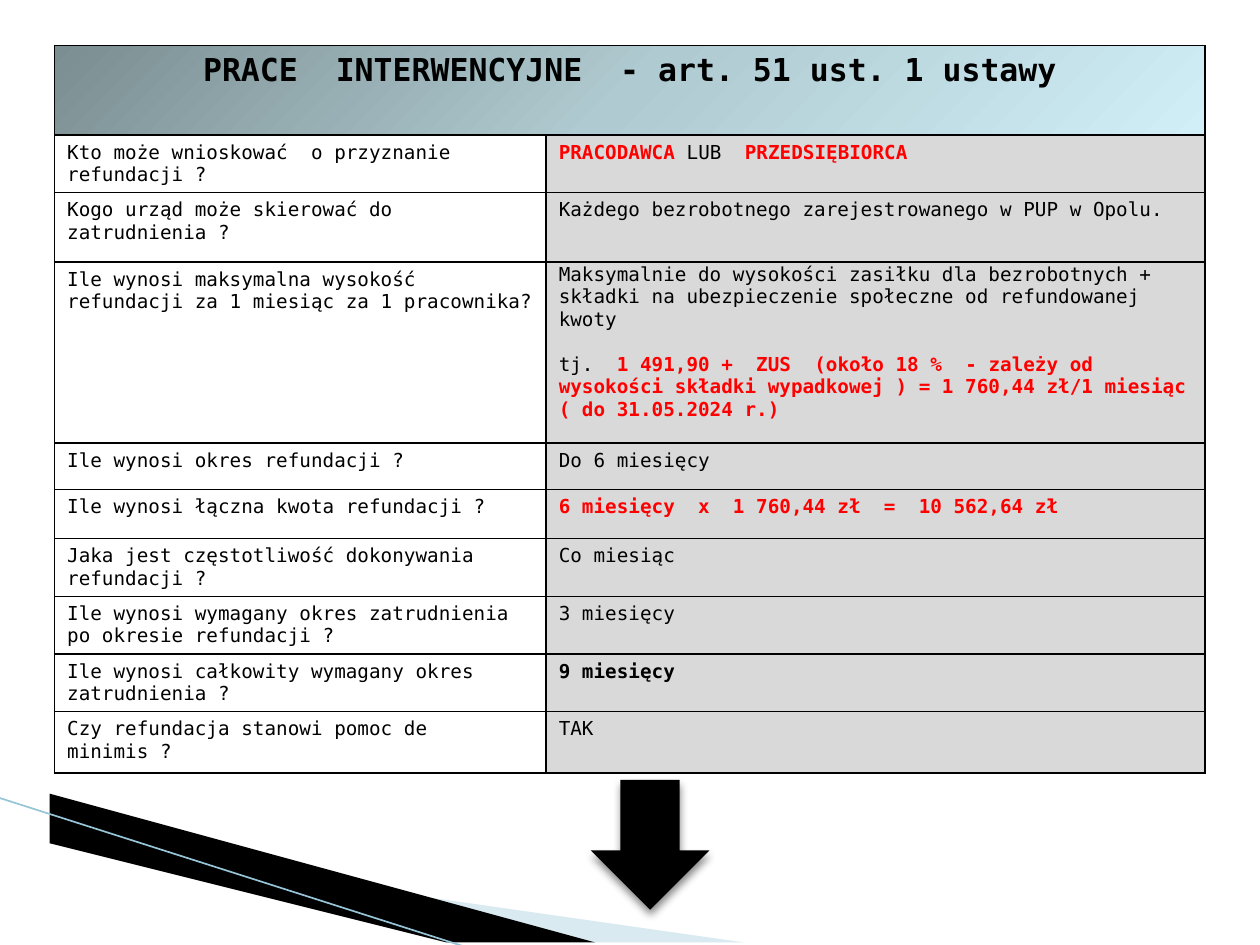
from lxml.etree import SubElement
from pptx import Presentation
from pptx.dml.color import RGBColor
from pptx.enum.shapes import MSO_CONNECTOR, MSO_SHAPE
from pptx.enum.text import PP_ALIGN
from pptx.oxml.ns import qn
from pptx.util import Cm, Pt

BLACK = RGBColor(0, 0, 0)
WHITE = RGBColor(255, 255, 255)
RED = RGBColor(255, 0, 0)
GREY = RGBColor(0xD9, 0xD9, 0xD9)
PALE = RGBColor(0xA0, 0xCB, 0xDC)
BLUE = RGBColor(0x97, 0xC5, 0xD8)
FADE = [(0, RGBColor(0x7B, 0x8E, 0x92)), (50, RGBColor(0xAF, 0xCA, 0xD0)),
        (100, RGBColor(0xD0, 0xEF, 0xF7))]

BODY = {"name": "DejaVu Sans Mono", "size": Pt(11), "bold": False}
BOLD = BODY | {"bold": True}
HEAD = BOLD | {"size": Pt(18)}


def plain(text):
    return (text, BODY, BLACK)


def red(text):
    return (text, BOLD, RED)


TITLE = "PRACE  INTERWENCYJNE  - art. 51 ust. 1 ustawy"
# Height in cm, question, paragraphs of the answer as lists of runs
ROWS = [
    (1.16, "Kto może wnioskować  o przyznanie  refundacji ?",
     [[red("PRACODAWCA"), plain(" LUB  "), red("PRZEDSIĘBIORCA")]]),
    (1.4, "Kogo urząd może skierować do zatrudnienia ?",
     [[plain("Każdego bezrobotnego zarejestrowanego w PUP w Opolu.")]]),
    (3.65, "Ile wynosi maksymalna wysokość refundacji za 1 miesiąc za 1 pracownika?",
     [[plain("Maksymalnie do wysokości zasiłku dla bezrobotnych + składki na "
             "ubezpieczenie społeczne od refundowanej kwoty")],
      [plain("tj.  "),
       red("1 491,90 +  ZUS  (około 18 %  - zależy od wysokości składki "
           "wypadkowej ) = 1 760,44 zł/1 miesiąc ( do 31.05.2024 r.)")]]),
    (0.94, "Ile wynosi okres refundacji ?", [[plain("Do 6 miesięcy")]]),
    (0.99, "Ile wynosi łączna kwota refundacji ?",
     [[red("6 miesięcy  x  1 760,44 zł  =  10 562,64 zł")]]),
    (1.16, "Jaka jest częstotliwość dokonywania refundacji ?", [[plain("Co miesiąc")]]),
    (1.16, "Ile wynosi wymagany okres zatrudnienia po okresie refundacji ?",
     [[plain("3 miesięcy")]]),
    (1.16, "Ile wynosi całkowity wymagany okres zatrudnienia ?",
     [[("9 miesięcy", BOLD, BLACK)]]),
    (1.24, "Czy refundacja stanowi pomoc de minimis ?", [[plain("TAK")]]),
]


def node(parent, tag, **attrs):
    return SubElement(parent, qn(tag), {key: str(val) for key, val in attrs.items()})


class Deck:
    def __init__(self):
        self.show = Presentation()
        self.show.slide_width, self.show.slide_height = Cm(25.4), Cm(19.05)
        self.slide = self.show.slides.add_slide(self.show.slide_layouts[6])

    def wedge(self, points, color, alpha=100):
        """Draw a filled outline through points given in cm."""
        pen = self.slide.shapes.build_freeform(*points[0], scale=Cm(1))
        pen.add_line_segments(points[1:])
        shape = pen.convert_to_shape()
        shape.shadow.inherit = False
        shape.fill.solid()
        shape.fill.fore_color.rgb = color
        shape.line.fill.background()
        if alpha < 100:
            tint = shape.fill._xPr.find(".//" + qn("a:srgbClr"))
            node(tint, "a:alpha", val=alpha * 1000)

    def line(self, start, end, color, width):
        ends = [Cm(n) for n in (*start, *end)]
        line = self.slide.shapes.add_connector(MSO_CONNECTOR.STRAIGHT, *ends)
        line.line.color.rgb = color
        line.line.width = Pt(width)
        node(line._element.spPr, "a:effectLst")

    def arrow(self, *box):
        shape = self.slide.shapes.add_shape(MSO_SHAPE.DOWN_ARROW, *map(Cm, box))
        shape.fill.solid()
        shape.fill.fore_color.rgb = BLACK
        shape.line.fill.background()
        shape.shadow.inherit = False
        glow = node(shape._element.spPr.find(qn("a:effectLst")), "a:outerShdw",
                    blurRad=Pt(5), dist=Pt(3), dir=90 * 60000, rotWithShape=0)
        node(node(glow, "a:srgbClr", val=BLACK), "a:alpha", val=45000)

    def table(self, left, top, widths, heights):
        size = Cm(left), Cm(top), Cm(sum(widths)), Cm(sum(heights))
        grid = self.slide.shapes.add_table(len(heights), len(widths), *size).table
        grid.first_row = grid.horz_banding = False
        for col, width in zip(grid.columns, widths):
            col.width = Cm(width)
        for row, height in zip(grid.rows, heights):
            row.height = Cm(height)
        return grid

    def cell(self, cell, paras, fill, align=PP_ALIGN.LEFT):
        """Write paragraphs of runs; fill is a colour or a list of stops."""
        frame = cell.text_frame
        for i, runs in enumerate(paras):
            para = frame.add_paragraph() if i else frame.paragraphs[0]
            para.alignment = align
            if i:
                para.space_before = Pt(13)
            for text, style, color in runs:
                run = para.add_run()
                run.text = text
                for key, val in style.items():
                    setattr(run.font, key, val)
                run.font.color.rgb = color
        self.edge(cell)
        if isinstance(fill, list):
            self.fade(cell, fill)
        else:
            cell.fill.solid()
            cell.fill.fore_color.rgb = fill

    def edge(self, cell):
        props = cell._tc.get_or_add_tcPr()
        for side in "LRTB":
            rule = node(props, "a:ln" + side, w=Pt(1))
            node(node(rule, "a:solidFill"), "a:srgbClr", val=BLACK)

    def fade(self, cell, stops):
        grad = node(cell._tc.get_or_add_tcPr(), "a:gradFill", rotWithShape=1)
        chain = node(grad, "a:gsLst")
        for place, color in stops:
            node(node(chain, "a:gs", pos=place * 1000), "a:srgbClr", val=color)
        node(grad, "a:lin", ang=45 * 60000, scaled=0)


def main():
    deck = Deck()
    deck.wedge([(1.4, 16.53), (15.11, 19.07), (11.58, 19.07), (1.4, 16.51)], PALE, 40)
    deck.wedge([(1.35, 16.48), (11.61, 19.07), (9.45, 19.1), (1.37, 16.51)], BLACK)
    deck.line((-0.03, 16.08), (9.42, 19.1), BLUE, 0.95)

    grid = deck.table(1.1, 0.92, [9.91, 13.28], [1.8] + [row[0] for row in ROWS])
    top = grid.cell(0, 0)
    top.merge(grid.cell(0, 1))
    deck.cell(top, [[(TITLE, HEAD, BLACK)]], FADE, PP_ALIGN.CENTER)
    deck.edge(grid.cell(0, 1))
    for i, (_, ask, reply) in enumerate(ROWS, 1):
        deck.cell(grid.cell(i, 0), [[plain(ask)]], WHITE)
        deck.cell(grid.cell(i, 1), reply, GREY)
    limit = grid.cell(3, 1)
    limit.margin_top, limit.margin_bottom = Cm(0.03), Cm(0)

    deck.arrow(11.91, 15.72, 2.39, 2.62)
    deck.show.save("out.pptx")


if __name__ == "__main__":
    main()
